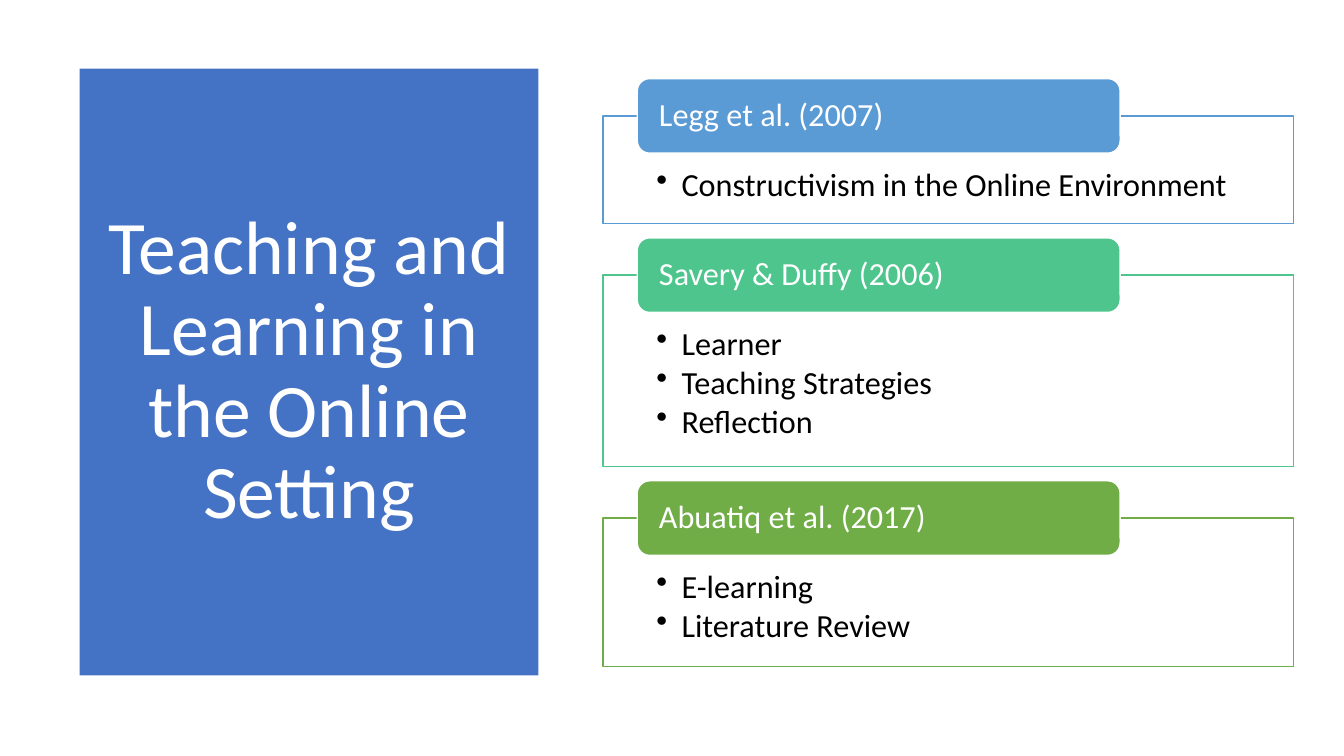
from dataclasses import dataclass

from lxml import etree
from pptx import Presentation
from pptx.dml.color import RGBColor
from pptx.enum.shapes import MSO_SHAPE
from pptx.enum.text import MSO_ANCHOR, PP_ALIGN
from pptx.oxml.ns import qn
from pptx.shapes.autoshape import Shape
from pptx.slide import Slide
from pptx.util import Inches, Pt

RECTANGLE = MSO_SHAPE.RECTANGLE
ROUNDED = MSO_SHAPE.ROUNDED_RECTANGLE
TOP, MIDDLE = MSO_ANCHOR.TOP, MSO_ANCHOR.MIDDLE
LEFT, CENTER = PP_ALIGN.LEFT, PP_ALIGN.CENTER

FONT = "Calibri"
COLORS = {
    "white": "FFFFFF",
    "black": "000000",
    "title": "4472C4",
    "blue": "5B9BD5",
    "teal": "4DC58D",
    "green": "70AD47",
}

BODY_LEFT, BODY_WIDTH = 5.98, 6.85
HEADER_LEFT, HEADER_WIDTH, HEADER_HEIGHT = 6.32, 4.79, 0.74
HEADER_RISE = HEADER_HEIGHT / 2
FIRST_BODY_TOP, BODY_GAP = 1.15, 0.51


@dataclass(frozen=True)
class Study:
    citation: str
    topics: tuple[str, ...]
    color: str
    height: float


STUDIES = (
    Study("Legg et al. (2007)", ("Constructivism in the Online Environment",), "blue", 1.07),
    Study("Savery & Duffy (2006)", ("Learner", "Teaching Strategies", "Reflection"), "teal", 1.9),
    Study("Abuatiq et al. (2017)", ("E-learning", "Literature Review"), "green", 1.47),
)


def rgb(name: str) -> RGBColor:
    return RGBColor.from_string(COLORS[name])


def add_box(slide: Slide, kind: MSO_SHAPE, bounds: tuple[float, float, float, float],
            fill: str, line: str | None = None) -> Shape:
    box = slide.shapes.add_shape(kind, *(Inches(length) for length in bounds))
    box.shadow.inherit = False
    box.fill.solid()
    box.fill.fore_color.rgb = rgb(fill)
    if line:
        box.line.color.rgb = rgb(line)
        box.line.width = Pt(1)
    else:
        box.line.fill.background()
    return box


def write(box: Shape, lines: tuple[str, ...], size: float, color: str, anchor: MSO_ANCHOR,
          align: PP_ALIGN, insets: tuple[float, float, float, float]) -> None:
    """Fill the box with one paragraph a line; insets run left, top, right, bottom."""
    frame = box.text_frame
    frame.text = "\n".join(lines)
    frame.word_wrap = True
    frame.vertical_anchor = anchor
    (frame.margin_left, frame.margin_top,
     frame.margin_right, frame.margin_bottom) = (Inches(inset) for inset in insets)
    for paragraph in frame.paragraphs:
        paragraph.alignment = align
        paragraph.line_spacing = 0.9
        for run in paragraph.runs:
            run.font.name = FONT
            run.font.size = Pt(size)
            run.font.color.rgb = rgb(color)


def add_bullets(box: Shape) -> None:
    for paragraph in box.text_frame.paragraphs:
        paragraph.level = 1
        paragraph.space_after = Pt(3)
        properties = paragraph._p.get_or_add_pPr()
        properties.set("marL", str(Inches(0.25)))
        properties.set("indent", str(Inches(-0.25)))
        etree.SubElement(properties, qn("a:buChar")).set("char", "•")


def set_opacity(box: Shape, percent: int) -> None:
    fill_color = box._element.spPr.find(qn("a:solidFill"))[0]
    etree.SubElement(fill_color, qn("a:alpha")).set("val", str(percent * 1000))


def add_study(slide: Slide, study: Study, top: float) -> None:
    body = add_box(slide, RECTANGLE, (BODY_LEFT, top, BODY_WIDTH, study.height),
                   "white", study.color)
    set_opacity(body, 90)
    write(body, study.topics, 23, "black", TOP, LEFT, (0.53, 0.52, 0.53, 0.18))
    add_bullets(body)
    header = add_box(slide, ROUNDED,
                     (HEADER_LEFT, top - HEADER_RISE, HEADER_WIDTH, HEADER_HEIGHT),
                     study.color, "white")
    write(header, (study.citation,), 23, "white", MIDDLE, LEFT, (0.18, 0, 0.18, 0))


def main() -> None:
    presentation = Presentation()
    presentation.slide_width = Inches(13.33)
    presentation.slide_height = Inches(7.5)
    slide = presentation.slides.add_slide(presentation.slide_layouts[6])

    title = add_box(slide, RECTANGLE, (0.79, 0.68, 4.55, 6.02), "title")
    write(title, ("Teaching and Learning in the Online Setting",), 54, "white",
          MIDDLE, CENTER, (0.1, 0.05, 0.1, 0.05))

    top = FIRST_BODY_TOP
    for study in STUDIES:
        add_study(slide, study, top)
        top += study.height + BODY_GAP

    presentation.save("out.pptx")


if __name__ == "__main__":
    main()
